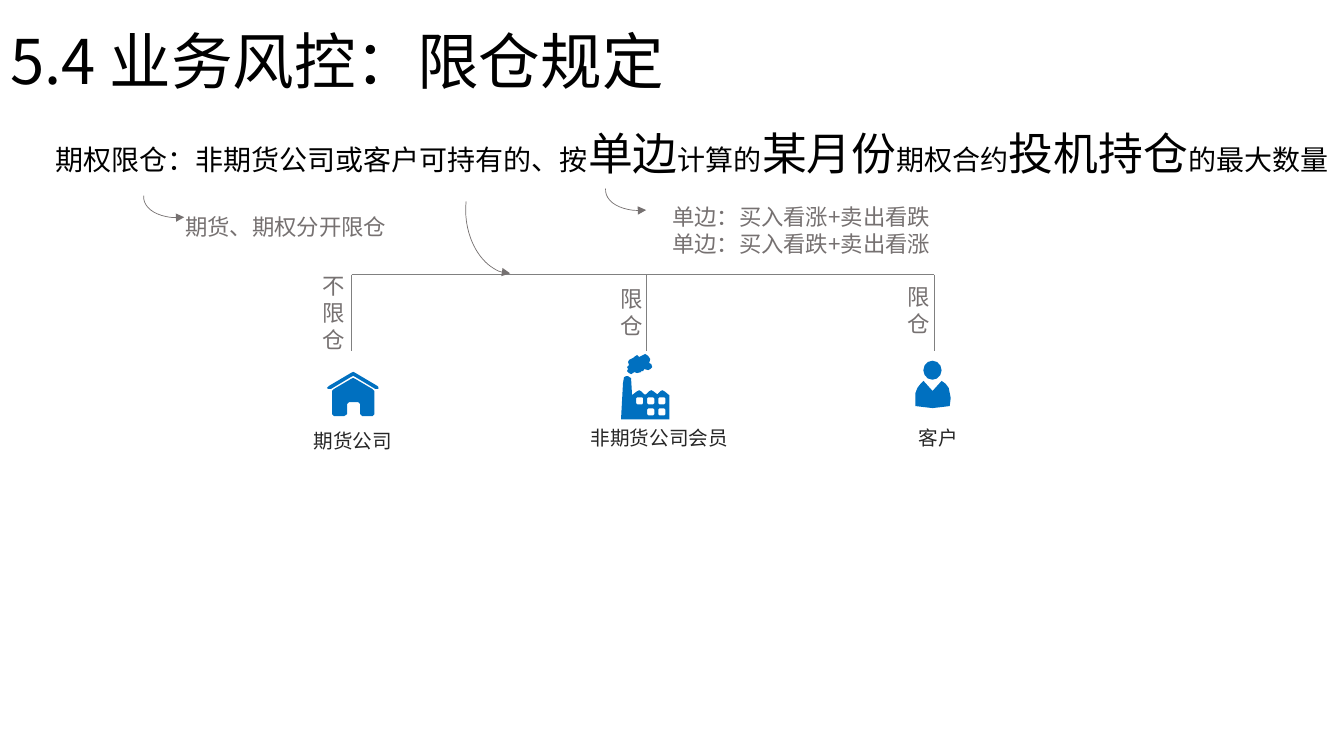
from lxml import etree
from pptx import Presentation, util as u
from pptx.dml import color
from pptx.enum import shapes, text
from pptx.oxml import ns

CJK_FONT = "Noto Sans CJK SC"
BLACK, DARK, GREY, LINE_GREY, BLUE = "000000", "262626", "767171", "808080", "0070C0"
ICON_UNIT = u.Cm(2.54) / 100  # icon outlines are drawn on this grid

HOUSE = [(26, 6), (24, 7), (7, 17), (5, 19), (5, 42), (7, 44), (17, 44), (20, 42),
         (20, 32), (22, 30), (31, 30), (33, 32), (33, 42), (35, 44), (45, 44),
         (47, 42), (47, 19), (45, 17), (28, 7)]
ROOF = [(51, 17), (48, 17), (28, 5), (26, 4), (24, 5), (4, 17), (1, 17), (0, 16),
        (2, 14), (24, 1), (26, 0), (28, 1), (50, 14), (51, 15)]
FACTORY = [(48, 41), (43, 37), (41, 36), (39, 37), (36, 40), (32, 37), (30, 36),
           (28, 37), (25, 40), (23, 40), (20, 37), (18, 36), (16, 37), (12, 40),
           (11, 41), (10, 24), (7, 22), (5, 22), (3, 23), (2, 29), (0, 65), (48, 65)]
SMOKE = [(8, 19), (10, 20), (12, 19), (13, 18), (16, 19), (20, 18), (20, 17),
         (22, 17), (23, 15), (27, 16), (29, 15), (31, 13), (30, 10), (28, 9),
         (29, 5), (27, 2), (24, 0), (20, 2), (18, 3), (16, 1), (13, 3), (12, 4),
         (8, 6), (7, 8), (8, 11), (6, 13), (7, 15), (6, 17)]
SHOULDERS = [(26, 20), (17, 30), (8, 20), (5, 23), (2, 27), (0, 32), (0, 45),
             (8, 46), (17, 47), (26, 46), (34, 45), (35, 37), (33, 27), (30, 23)]


def rgb(hex_string):
    return color.RGBColor.from_string(hex_string)


def cm(*lengths):
    return [u.Cm(length) for length in lengths]


def format_run(run, size, hex_string, font_name=CJK_FONT):
    run.font.size = u.Pt(size)
    run.font.name = font_name
    run.font.color.rgb = rgb(hex_string)
    properties = run.font._element
    etree.SubElement(properties, ns.qn("a:ea"), typeface=CJK_FONT)


def add_label(slide, box, lines, size, hex_string):
    frame = slide.shapes.add_textbox(*cm(*box)).text_frame
    frame.word_wrap = True
    frame.text = lines
    for paragraph in frame.paragraphs:
        paragraph.alignment = text.PP_ALIGN.CENTER
        for run in paragraph.runs:
            format_run(run, size, hex_string)


def add_line(slide, start_x, start_y, end_x, end_y):
    connector = slide.shapes.add_connector(
        shapes.MSO_CONNECTOR.STRAIGHT, *cm(start_x, start_y, end_x, end_y))
    connector.line.color.rgb = rgb(LINE_GREY)
    connector.line.width = u.Pt(0.75)
    etree.SubElement(connector._element.spPr, ns.qn("a:effectLst"))


def add_curved_arrow(slide, box, start_angle):
    arc = slide.shapes.add_shape(shapes.MSO_SHAPE.ARC, *cm(*box))
    arc.shadow.inherit = False
    arc.fill.background()
    arc.line.color.rgb = rgb(GREY)
    arc.line.width = u.Pt(0.5)
    arc.rotation = 82.3
    # Adjustments count 100000ths, angles 60000ths of a degree
    arc.adjustments[0] = start_angle * 0.6
    arc.adjustments[1] = 356.09 * 0.6
    properties = arc._element.spPr
    properties.find(ns.qn("a:xfrm")).set("flipV", "1")
    etree.SubElement(properties.find(ns.qn("a:ln")), ns.qn("a:tailEnd"), type="triangle")


def paint_blue(shape):
    shape.shadow.inherit = False
    shape.fill.solid()
    shape.fill.fore_color.rgb = rgb(BLUE)
    shape.line.fill.background()


def add_outline(group, left, top, *contours):
    first, *holes = contours
    builder = group.shapes.build_freeform(*first[0], scale=ICON_UNIT)
    builder.add_line_segments(first[1:], close=True)
    for hole in holes:
        builder.move_to(*hole[0])
        builder.add_line_segments(hole[1:], close=True)
    paint_blue(builder.convert_to_shape(*cm(left, top)))


def draw_house(slide, left, top):
    group = slide.shapes.add_group_shape()
    add_outline(group, left, top, HOUSE)
    add_outline(group, left, top, ROOF)


def draw_factory(slide, left, top):
    group = slide.shapes.add_group_shape()
    corners = [(1, 0), (6, 0), (7, 1), (7, 6), (6, 7), (1, 7), (0, 6), (0, 1)]
    windows = [[(15 + 11 * column + x, 43 + 11 * row + y) for x, y in corners]
               for row in range(2) for column in range(row, 3)]
    add_outline(group, left, top, FACTORY, *windows)
    add_outline(group, left, top, SMOKE)


def draw_client(slide, left, top):
    group = slide.shapes.add_group_shape()
    paint_blue(group.shapes.add_shape(
        shapes.MSO_SHAPE.OVAL, *cm(left + 0.2, top, 0.46, 0.48)))
    add_outline(group, left, top, SHOULDERS)


def add_title(slide, box):
    title = slide.shapes.title
    title.left, title.top, title.width, title.height = cm(*box)
    frame = title.text_frame
    frame.text = "5.4 业务风控：限仓规定"
    frame.auto_size = text.MSO_AUTO_SIZE.NONE
    frame.vertical_anchor = text.MSO_ANCHOR.MIDDLE
    paragraph = frame.paragraphs[0]
    paragraph.alignment = text.PP_ALIGN.LEFT
    paragraph.line_spacing = 0.9
    format_run(paragraph.runs[0], 44, BLACK)


def add_definition(slide, box):
    frame = slide.shapes.add_textbox(*cm(*box)).text_frame
    frame.word_wrap = False
    paragraph = frame.paragraphs[0]
    paragraph.alignment = text.PP_ALIGN.CENTER
    phrases = ["期权限仓：非期货公司或客户可持有的、按", "单边", "计算的", "某月份",
               "期权合约", "投机持仓", "的最大数量"]
    for index, phrase in enumerate(phrases):
        run = paragraph.add_run()
        run.text = phrase
        format_run(run, 32 if index % 2 else 20, BLACK, "Calibri")


def add_explanations(slide, left, top):
    add_curved_arrow(slide, (left, top, 1.19, 1.98), 265.3)
    add_curved_arrow(slide, (left + 7.29, top + 0.53, 2.92, 2.03), 242.74)
    add_curved_arrow(slide, (left + 11.64, top - 0.18, 1.19, 1.98), 265.3)
    add_label(slide, (left + 0.07, top + 1.36, 6.25, 0.94), "期货、期权分开限仓", 16, GREY)
    add_label(slide, (left + 12.19, top + 1.11, 7.98, 1.63),
              "单边：买入看涨+卖出看跌\n单边：买入看跌+卖出看涨", 16, GREY)


def add_participants(slide, left, top, width, height):
    # Offsets of rule, icon and name are measured from the top of each branch
    branches = [
        (0, "不限仓", (-0.99, -0.19), draw_house, (-0.62, 2.45), "期货公司", (-1.75, 3.76), 3.56),
        (7.44, "限仓", (-0.91, 0.14), draw_factory, (-0.65, 2),
         "非期货公司会员", (-2.11, 3.7), 4.85),
        (width, "限仓", (-0.94, 0.09), draw_client, (-0.48, 2.17), "客户", (-1.68, 3.7), 3.56),
    ]
    add_line(slide, left, top, left + width, top)
    for offset, rule, rule_at, draw_icon, icon_at, name, name_at, name_width in branches:
        x = left + offset
        add_line(slide, x, top, x, top + height)
        add_label(slide, (x + rule_at[0], top + rule_at[1], 0.86, 0.25 + 0.69 * len(rule)),
                  rule, 16, GREY)
        draw_icon(slide, x + icon_at[0], top + icon_at[1])
        add_label(slide, (x + name_at[0], top + name_at[1], name_width, 0.86), name, 14, DARK)


def main():
    presentation = Presentation()
    presentation.slide_width, presentation.slide_height = cm(33.87, 19.05)
    slide = presentation.slides.add_slide(presentation.slide_layouts[5])
    add_title(slide, (0, 0.64, 28.55, 1.96))
    add_participants(slide, 8.86, 6.92, 14.69, 1.93)
    add_definition(slide, (1, 3.05, 32.87, 1.63))
    add_explanations(slide, 4.01, 3.89)
    presentation.save("out.pptx")


if __name__ == "__main__":
    main()
